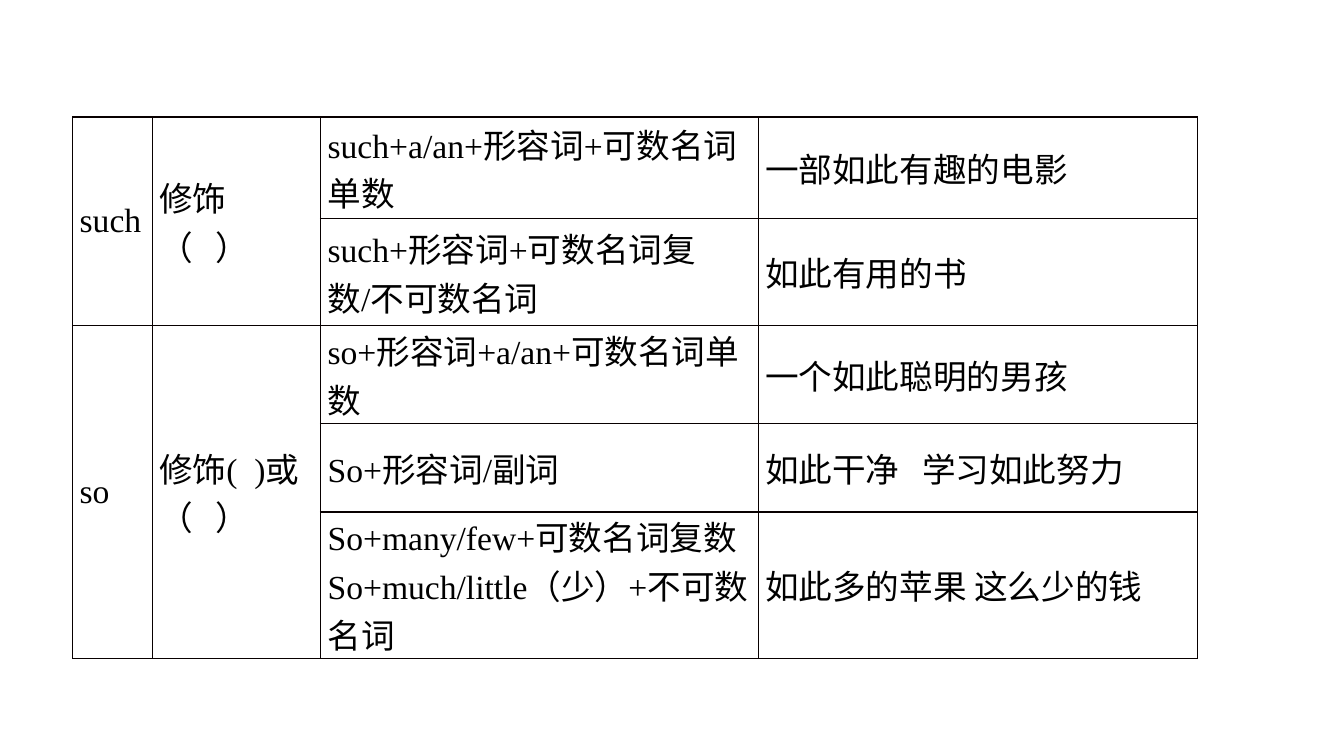
from lxml import etree
from pptx import Presentation
from pptx.dml.color import RGBColor
from pptx.enum.text import MSO_ANCHOR
from pptx.oxml import parse_xml
from pptx.oxml.ns import nsdecls
from pptx.util import Inches, Pt

BLACK = RGBColor(0x00, 0x00, 0x00)
BORDER = RGBColor(0x08, 0x00, 0x00)
FONT = "Times New Roman"

WIDTHS = [0.79, 1.67, 4.34, 4.36]
HEIGHTS = [1.01, 1.06, 0.97, 0.88, 1.45]
# First row, last row, word, use
GROUPS = [
    (0, 1, "such", "修饰（   ）"),
    (2, 4, "so", "修饰(  )或（   ）"),
]
RULES = [
    ("such+a/an+形容词+可数名词单数", "一部如此有趣的电影"),
    ("such+形容词+可数名词复数/不可数名词", "如此有用的书"),
    ("so+形容词+a/an+可数名词单数", "一个如此聪明的男孩"),
    ("So+形容词/副词", "如此干净   学习如此努力"),
    ("So+many/few+可数名词复数\nSo+much/little（少）+不可数名词", "如此多的苹果 这么少的钱"),
]


def add_borders(cell):
    props = cell._tc.get_or_add_tcPr()
    for spot, side in enumerate(("lnL", "lnR", "lnT", "lnB")):
        props.insert(spot, parse_xml(
            f'<a:{side} {nsdecls("a")} w="{Pt(1)}"><a:solidFill>'
            f'<a:srgbClr val="{BORDER}"/></a:solidFill></a:{side}>'))


def write(cell, text):
    frame = cell.text_frame
    for i, line in enumerate(text.split("\n")):
        para = frame.add_paragraph() if i else frame.paragraphs[0]
        run = para.add_run()
        run.text = line
        run.font.size = Pt(24)
        run.font.name = FONT
        run.font.color.rgb = BLACK


prs = Presentation()
prs.slide_width = Inches(13.33)
prs.slide_height = Inches(7.5)
slide = prs.slides.add_slide(prs.slide_layouts[6])

table = slide.shapes.add_table(
    len(HEIGHTS), len(WIDTHS), Inches(0.72), Inches(1.16),
    Inches(sum(WIDTHS)), Inches(sum(HEIGHTS))).table
table.first_row = False
table.horz_banding = False
for column, width in zip(table.columns, WIDTHS):
    column.width = Inches(width)
for row, height in zip(table.rows, HEIGHTS):
    row.height = Inches(height)

for cell in table.iter_cells():
    cell.vertical_anchor = MSO_ANCHOR.MIDDLE
    cell.margin_left = cell.margin_right = Inches(0.07)
    cell.margin_top = cell.margin_bottom = 0
    cell.fill.background()
    add_borders(cell)

for first, last, *texts in GROUPS:
    for col, text in enumerate(texts):
        table.cell(first, col).merge(table.cell(last, col))
        write(table.cell(first, col), text)

for row, texts in enumerate(RULES):
    for col, text in enumerate(texts, start=2):
        write(table.cell(row, col), text)

prs.save("out.pptx")
